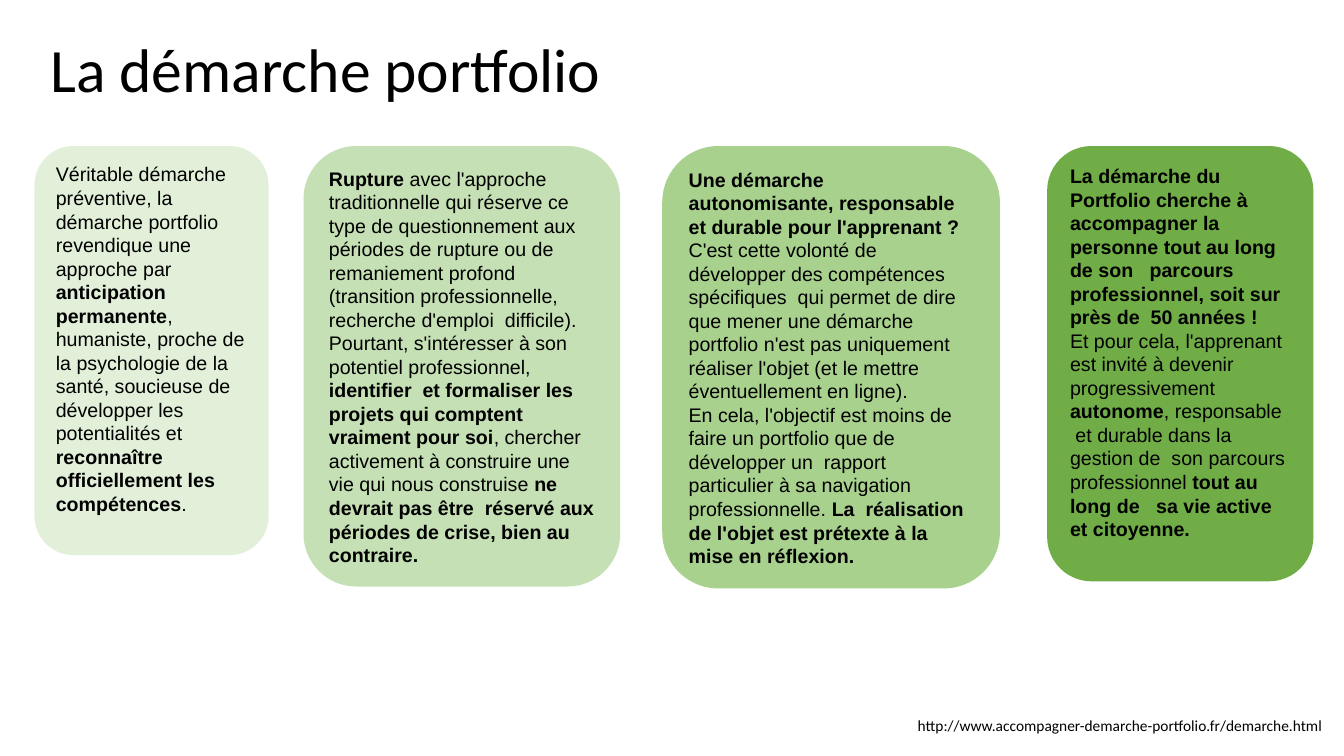
import pptx
import pptx.util
import pptx.dml.color
import pptx.enum.shapes
import pptx.enum.text

Cm = pptx.util.Cm
Pt = pptx.util.Pt
ALIGN = pptx.enum.text.PP_ALIGN
ANCHOR = pptx.enum.text.MSO_ANCHOR
CARD = pptx.enum.shapes.MSO_SHAPE.FLOWCHART_ALTERNATE_PROCESS

TITLE = "La démarche portfolio"
URL = "http://www.accompagner-demarche-portfolio.fr/demarche.html"
CARD_TOP = 3.68

CARDS = [
    {"left": 0.87, "width": 5.9, "height": 10.31, "fill": "E2F0D9", "text": [
        [("Véritable démarche préventive, la démarche portfolio revendique une approche par ", False),
         ("anticipation permanente", True),
         (", humaniste, proche de la psychologie de la santé, soucieuse de développer les potentialités et ", False),
         ("reconnaître officiellement les compétences", True),
         (".", False)],
    ]},
    {"left": 7.65, "width": 7.98, "height": 11.1, "fill": "C5E0B4", "text": [
        [("Rupture ", True),
         ("avec l'approche traditionnelle qui réserve ce type de questionnement aux périodes de rupture "
          "ou de remaniement profond (transition professionnelle, recherche d'emploi  difficile). "
          "Pourtant, s'intéresser à son potentiel professionnel, ", False),
         ("identifier  et formaliser les projets qui comptent vraiment pour soi", True),
         (", chercher activement à construire une vie qui nous construise ", False),
         ("ne devrait pas être  réservé aux périodes de crise, bien au contraire.", True)],
    ]},
    {"left": 16.69, "width": 8.51, "height": 11.15, "fill": "A9D18E", "text": [
        [("Une démarche autonomisante, responsable et durable pour l'apprenant ?", True)],
        [("C'est cette volonté de développer des compétences spécifiques  qui permet de dire que mener "
          "une démarche portfolio n'est pas uniquement réaliser l'objet (et le mettre éventuellement "
          "en ligne).", False)],
        [("En cela, l'objectif est moins de faire un portfolio que de développer un  rapport particulier "
          "à sa navigation professionnelle. ", False),
         ("La  réalisation de l'objet est prétexte à la mise en réflexion.", True)],
    ]},
    {"left": 26.39, "width": 6.71, "height": 10.97, "fill": "70AD47", "text": [
        [("La démarche du Portfolio cherche à accompagner la personne tout au long de son   parcours "
          "professionnel, soit sur près de  50 années !", True)],
        [("Et pour cela, l'apprenant est invité à devenir progressivement ", False),
         ("autonome", True),
         (", responsable   et durable dans la gestion de  son parcours professionnel ", False),
         ("tout au long de   sa vie active et citoyenne.", True)],
    ]},
]


def color(value):
    return pptx.dml.color.RGBColor.from_string(value)


def write(sp, paragraphs, font, size, anchor, align=ALIGN.LEFT, spacing=1.0):
    tf = sp.text_frame
    for name, value in {"word_wrap": True, "vertical_anchor": anchor}.items():
        setattr(tf, name, value)
    for i, runs in enumerate(paragraphs):
        p = tf.add_paragraph() if i else tf.paragraphs[0]
        for name, value in {"alignment": align, "line_spacing": spacing}.items():
            setattr(p, name, value)
        for text, bold in runs:
            r = p.add_run()
            r.text = text
            for name, value in {"name": font, "size": Pt(size), "bold": bold}.items():
                setattr(r.font, name, value)
            r.font.color.rgb = color("000000")


prs = pptx.Presentation()
prs.slide_width, prs.slide_height = Cm(33.87), Cm(19.05)
s = prs.slides.add_slide(prs.slide_layouts[6])

sp = s.shapes.add_textbox(Cm(1.02), Cm(0), Cm(29.21), Cm(3.68))
write(sp, [[(TITLE, False)]], "Calibri", 44, ANCHOR.MIDDLE, spacing=0.9)

sp = s.shapes.add_textbox(Cm(16.28), Cm(17.93), Cm(17.3), Cm(0.71))
write(sp, [[(URL, False)]], "Calibri", 11, ANCHOR.TOP, align=ALIGN.RIGHT)

for card in CARDS:
    sp = s.shapes.add_shape(CARD, Cm(card["left"]), Cm(CARD_TOP), Cm(card["width"]), Cm(card["height"]))
    sp.shadow.inherit = False
    sp.fill.solid()
    sp.fill.fore_color.rgb = color(card["fill"])
    sp.line.fill.background()
    write(sp, card["text"], "Arial", 14, ANCHOR.TOP)

prs.save("out.pptx")
